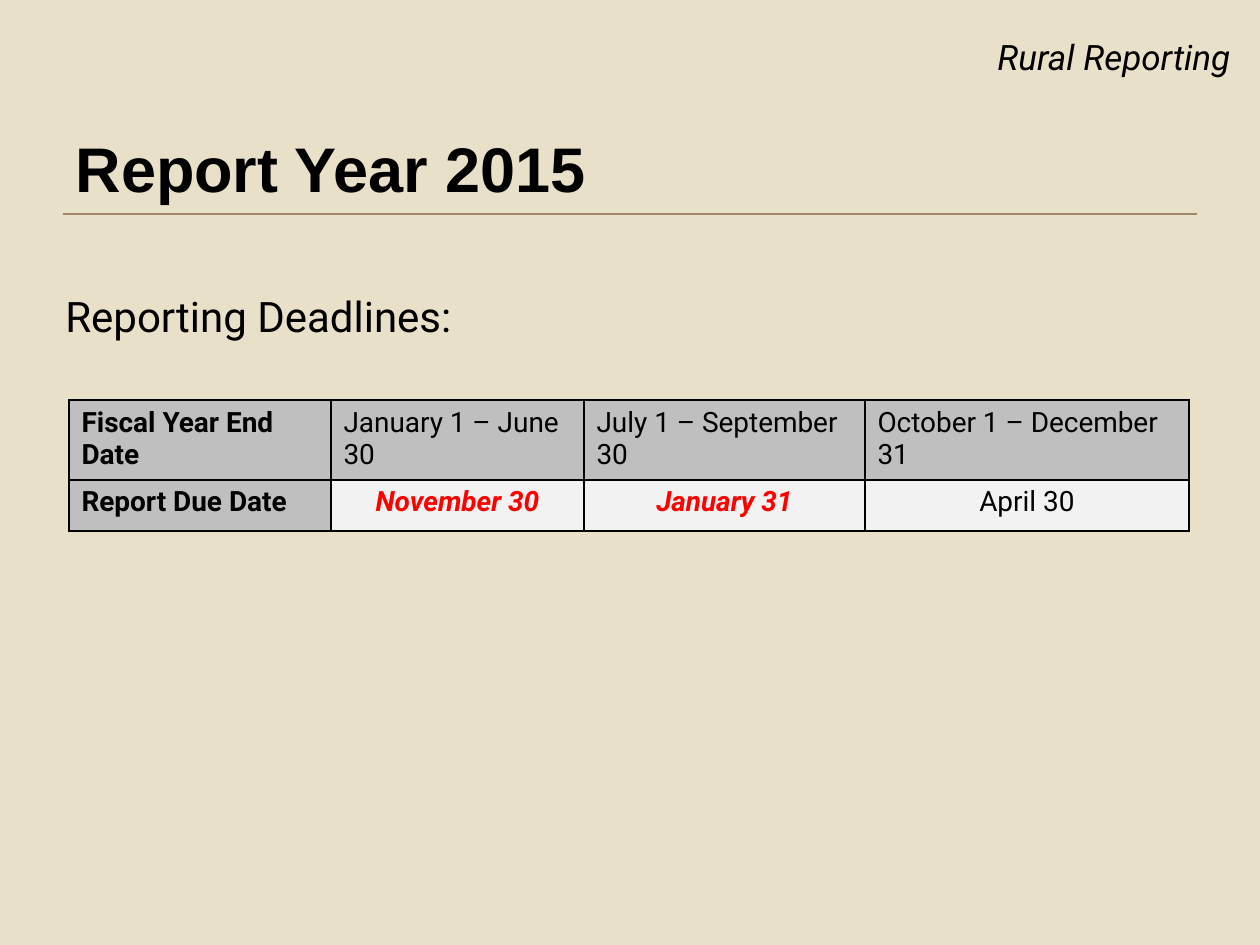
from lxml import etree
from pptx import Presentation
from pptx.dml.color import RGBColor
from pptx.enum.shapes import MSO_CONNECTOR
from pptx.enum.text import MSO_ANCHOR, PP_ALIGN
from pptx.oxml.ns import qn
from pptx.util import Pt

LEFT, CENTER, RIGHT = PP_ALIGN.LEFT, PP_ALIGN.CENTER, PP_ALIGN.RIGHT
MIDDLE = MSO_ANCHOR.MIDDLE
STRAIGHT = MSO_CONNECTOR.STRAIGHT

EMU_PER_PX = 914400 / 126
TITLE_ONLY = 5

COLORS = {
    "background": "E9E0C9",
    "rule": "A38769",
    "text": "000000",
    "border": "000000",
    "urgent": "FF0000",
    "label_fill": "BFBFBF",
    "date_fill": "F2F2F2",
}

BASE = {"name": "Roboto", "size": Pt(16), "bold": False, "italic": False}
LABEL = {**BASE, "bold": True}
URGENT = {**LABEL, "italic": True}
HEADER = {**BASE, "size": Pt(20), "italic": True}
SUBTITLE = {**BASE, "size": Pt(24)}
TITLE = {**LABEL, "name": "Arial", "size": Pt(36)}

COLUMN_WIDTHS = [262, 253, 281, 324]
ROW_HEIGHTS = [78, 51]
DEADLINES = [
    ("January 1 – June 30", "November 30", True),
    ("July 1 – September 30", "January 31", True),
    ("October 1 – December 31", "April 30", False),
]


def px(length):
    return round(length * EMU_PER_PX)


def color(name):
    return RGBColor.from_string(COLORS[name])


def write(text_frame, text, style, alignment=LEFT, color_name="text"):
    text_frame.word_wrap = True
    paragraph = text_frame.paragraphs[0]
    paragraph.alignment = alignment
    run = paragraph.add_run()
    run.text = text
    for attribute, value in style.items():
        setattr(run.font, attribute, value)
    run.font.color.rgb = color(color_name)


def add_text(slide, box, text, style, alignment=LEFT):
    shape = slide.shapes.add_textbox(*map(px, box))
    write(shape.text_frame, text, style, alignment)


def add_title(slide, box, text):
    left, top, width, height = box
    title = slide.shapes.title
    title.left, title.top, title.width, title.height = map(px, box)
    title.text_frame.vertical_anchor = MIDDLE
    write(title.text_frame, text, TITLE)

    rule_top = px(top + height - 10)
    rule = slide.shapes.add_connector(
        STRAIGHT, px(left), rule_top, px(left + width), rule_top)
    rule.line.color.rgb = color("rule")
    rule.line.width = Pt(1)
    etree.SubElement(rule._element.spPr, qn("a:effectLst"))


def set_borders(cell):
    properties = cell._tc.get_or_add_tcPr()
    for position, side in enumerate(("a:lnL", "a:lnR", "a:lnT", "a:lnB")):
        line = etree.Element(qn(side), w=str(Pt(1)))
        fill = etree.SubElement(line, qn("a:solidFill"))
        etree.SubElement(fill, qn("a:srgbClr"), val=COLORS["border"])
        properties.insert(position, line)


def fill_cell(cell, fill_name, text, style, alignment=LEFT, color_name="text"):
    cell.fill.solid()
    cell.fill.fore_color.rgb = color(fill_name)
    write(cell.text_frame, text, style, alignment, color_name)
    set_borders(cell)


def add_deadline_table(slide, left, top):
    table = slide.shapes.add_table(
        len(ROW_HEIGHTS), len(COLUMN_WIDTHS), px(left), px(top),
        px(sum(COLUMN_WIDTHS)), px(sum(ROW_HEIGHTS))).table
    for column, width in zip(table.columns, COLUMN_WIDTHS):
        column.width = px(width)
    for row, height in zip(table.rows, ROW_HEIGHTS):
        row.height = px(height)

    for row, label in enumerate(("Fiscal Year End Date", "Report Due Date")):
        fill_cell(table.cell(row, 0), "label_fill", label, LABEL)
    for column, (period, due_date, urgent) in enumerate(DEADLINES, start=1):
        style, color_name = (URGENT, "urgent") if urgent else (BASE, "text")
        fill_cell(table.cell(0, column), "label_fill", period, BASE)
        fill_cell(table.cell(1, column), "date_fill", due_date, style,
                  CENTER, color_name)


def main():
    presentation = Presentation()
    presentation.slide_width = px(1260)
    presentation.slide_height = px(945)
    slide = presentation.slides.add_slide(
        presentation.slide_layouts[TITLE_ONLY])
    slide.background.fill.solid()
    slide.background.fill.fore_color.rgb = color("background")

    add_text(slide, (699, 29, 544, 55), "Rural Reporting", HEADER, RIGHT)
    add_title(slide, (63, 111, 1134, 113), "Report Year 2015")
    add_deadline_table(slide, 69, 400)
    add_text(slide, (53, 284, 504, 63), "Reporting Deadlines:", SUBTITLE)
    presentation.save("out.pptx")


if __name__ == "__main__":
    main()
